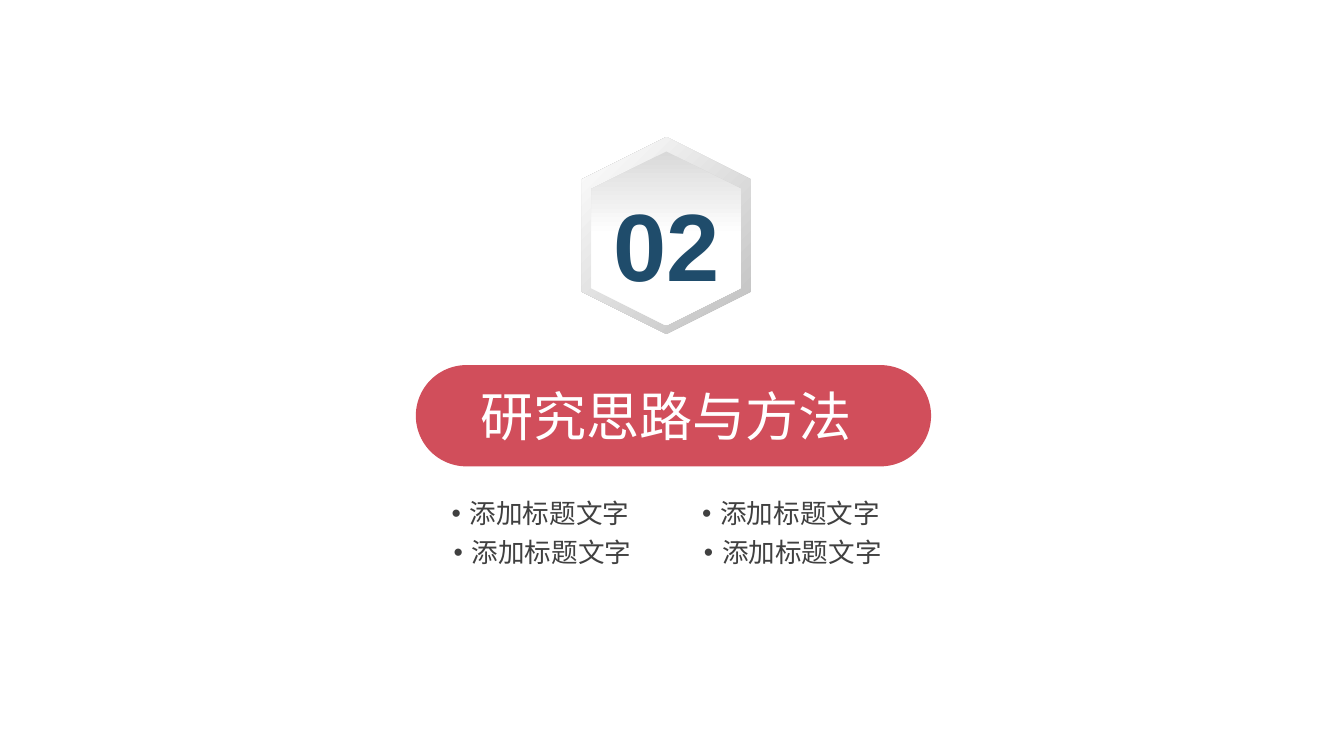
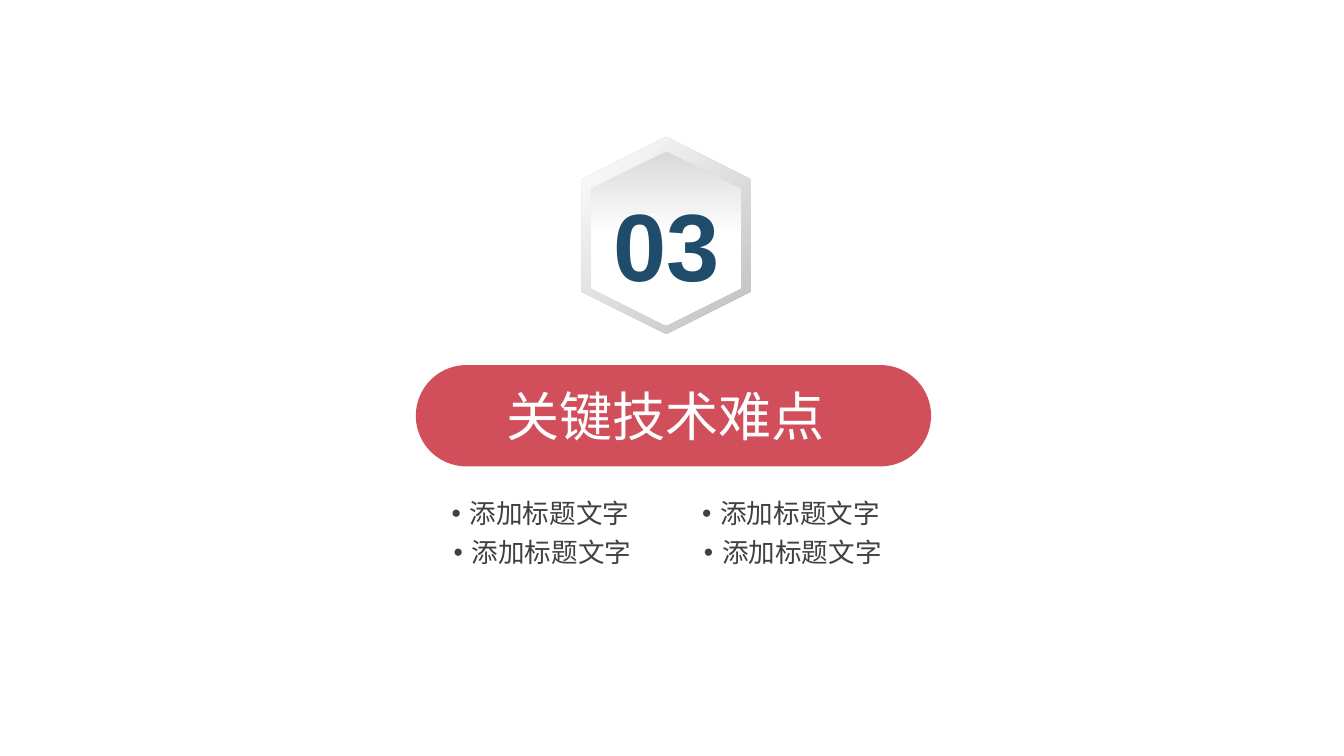
from lxml import etree
from pptx import Presentation
from pptx.dml.color import RGBColor
from pptx.enum.shapes import MSO_SHAPE
from pptx.enum.text import MSO_ANCHOR, MSO_AUTO_SIZE, PP_ALIGN
from pptx.oxml.ns import qn
from pptx.util import Inches, Pt

PILL, HEXAGON = MSO_SHAPE.ROUNDED_RECTANGLE, MSO_SHAPE.HEXAGON
CENTER = PP_ALIGN.CENTER
TOP, MIDDLE = MSO_ANCHOR.TOP, MSO_ANCHOR.MIDDLE
GROW = MSO_AUTO_SIZE.SHAPE_TO_FIT_TEXT

FONT = "Arial"
RED, NAVY, GREY, WHITE = "D14E5B", "1F4C6B", "404040", "FFFFFF"
SILVER, PALE = "BFBFBF", "D9D9D9"

BADGE_BOX = (5.94, 1.58, 2.06, 1.77)
BANNER_BOX = (4.35, 3.82, 5.39, 1.06)
TOPICS_BOX = (4.72, 5.2, 4.51, 0.75)

SECTIONS = [
    ("02", "研究思路与方法", ["添加标题文字"] * 4),
    ("03", "关键技术难点", ["添加标题文字"] * 4),
]


def color(hex_string):
    return RGBColor.from_string(hex_string)


def add_shape(shapes, kind, box):
    shape = shapes.add_shape(kind, *map(Inches, box))
    shape.shadow.inherit = False
    shape.line.fill.background()
    return shape


def add_label(shapes, box, text, size, hex_string, bold=False, wrap=True,
              anchor=TOP, inset_top=0, bullet_indent=0):
    frame = shapes.add_textbox(*map(Inches, box)).text_frame
    frame.word_wrap = wrap
    frame.auto_size = GROW
    frame.vertical_anchor = anchor
    frame.margin_left = frame.margin_right = frame.margin_bottom = 0
    frame.margin_top = Inches(inset_top)
    paragraph = frame.paragraphs[0]
    paragraph.text = text
    paragraph.alignment = CENTER
    if bullet_indent:
        properties = paragraph._p.get_or_add_pPr()
        properties.set("marL", str(Inches(bullet_indent)))
        properties.set("indent", str(-Inches(bullet_indent)))
        etree.SubElement(properties, qn("a:buFont")).set("typeface", FONT)
        etree.SubElement(properties, qn("a:buChar")).set("char", "•")
    font = paragraph.font
    font.name, font.size, font.bold = FONT, Pt(size), bold
    font.color.rgb = color(hex_string)


def add_hexagon(shapes, box, dark, fade_end, angle):
    hexagon = add_shape(shapes, HEXAGON, box)
    hexagon.rotation = 90
    hexagon.fill.gradient()
    hexagon.fill.gradient_angle = angle
    start, end = hexagon.fill.gradient_stops
    start.color.rgb, start.position = color(dark), 0
    end.color.rgb, end.position = color(WHITE), fade_end


def add_badge(slide, box, number):
    left, top, width, height = box
    badge = slide.shapes.add_group_shape().shapes
    add_hexagon(badge, box, SILVER, 1, 225)
    add_hexagon(badge, (left + 0.12, top + 0.13, width - 0.24, height - 0.2),
                PALE, 0.48, 0)
    add_label(badge, (left + 0.31, top + 0.3, width - 0.62, 1.21),
              number, 72, NAVY, bold=True, inset_top=0.07)


def add_banner(slide, box, title):
    left, top, width, height = box
    pill = add_shape(slide.shapes, PILL, box)
    pill.adjustments[0] = 0.5
    pill.fill.solid()
    pill.fill.fore_color.rgb = color(RED)
    add_label(slide.shapes, (left + 0.19, top + 0.19, width - 0.54, height - 0.39),
              title, 40, WHITE, anchor=MIDDLE)


def add_topics(slide, box, topics):
    left, top, width, height = box
    topic_width, topic_height, row_shift = 1.87, 0.34, 0.02
    column_step = width - topic_width - row_shift
    row_step = height - topic_height
    for index, topic in enumerate(topics):
        row, column = divmod(index, 2)
        add_label(slide.shapes,
                  (left + column * column_step + row * row_shift,
                   top + row * row_step, topic_width, topic_height),
                  topic, 20, GREY, wrap=False, bullet_indent=0.19)


def add_section_slide(deck, number, title, topics):
    slide = deck.slides.add_slide(deck.slide_layouts[6])
    add_banner(slide, BANNER_BOX, title)
    add_topics(slide, TOPICS_BOX, topics)
    add_badge(slide, BADGE_BOX, number)


def main():
    deck = Presentation()
    deck.slide_width, deck.slide_height = Inches(14.06), Inches(7.91)
    for section in SECTIONS:
        add_section_slide(deck, *section)
    deck.save("out.pptx")


if __name__ == "__main__":
    main()
